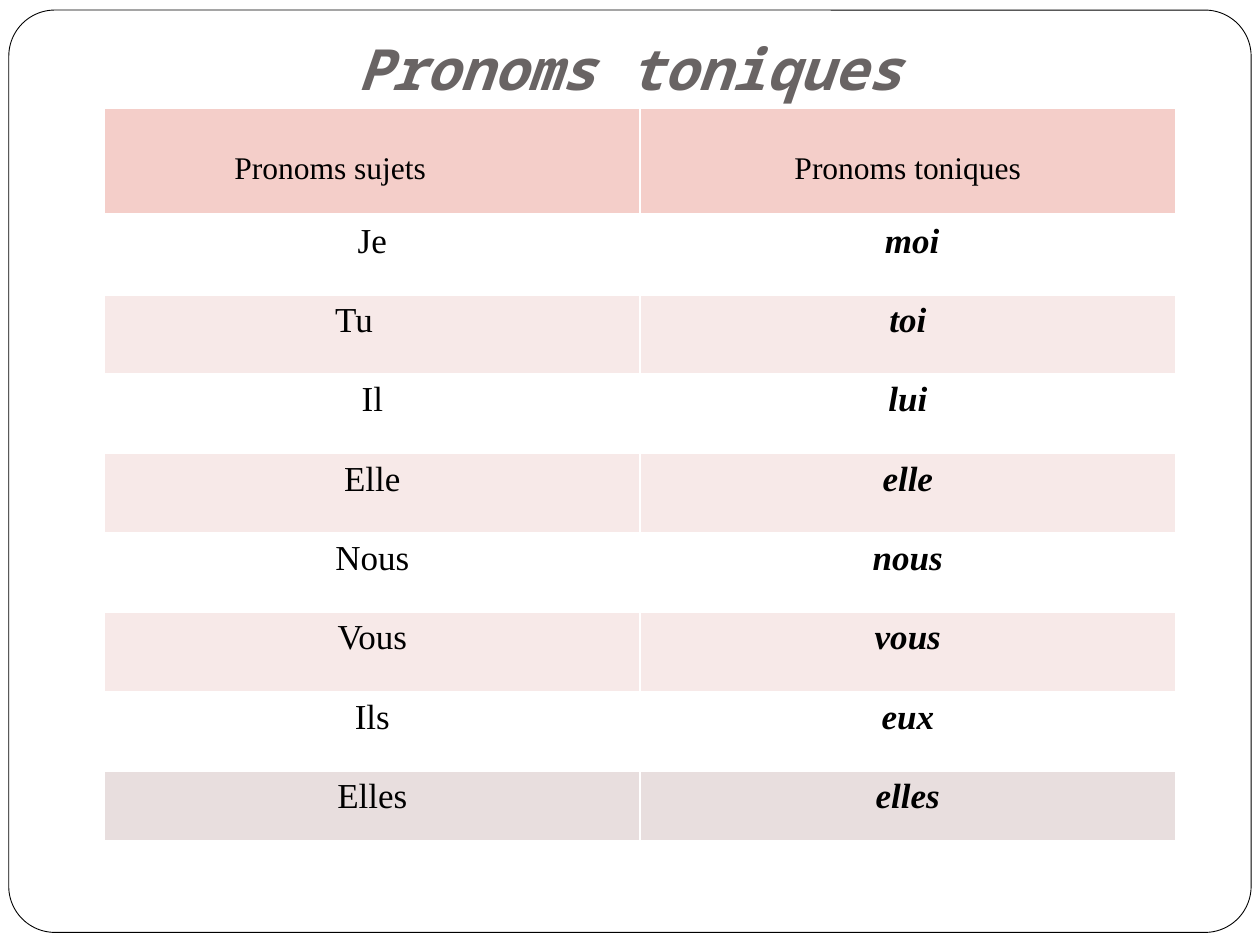
import pptx
import pptx.util
from lxml import etree
from pptx.dml.color import RGBColor
from pptx.enum.shapes import MSO_SHAPE
from pptx.enum.text import MSO_ANCHOR, MSO_AUTO_SIZE, PP_ALIGN
from pptx.oxml.ns import qn
from pptx.util import Inches

# Content
TITLE = "Pronoms toniques"
HEADINGS = ("Pronoms sujets", "Pronoms toniques")
PRONOUNS = [
    ("Je", "moi"),
    ("Tu", "toi"),
    ("Il", "lui"),
    ("Elle", "elle"),
    ("Nous", "nous"),
    ("Vous", "vous"),
    ("Ils", "eux"),
    ("Elles", "elles"),
]
ROWS = [HEADINGS] + PRONOUNS

# Layout: left indents move single entries away from the centre
INDENTS = {"Pronoms sujets": 0.93, "Tu": 1.73}
NUDGES = {"moi": 0.07}
HEADER_HEIGHT, ROW_HEIGHT, LAST_HEIGHT = 0.85, 0.63, 0.55
COLUMN_WIDTH = 4.25
HEADER_FILL, BAND_FILL, LAST_FILL, PLAIN_FILL = "F4CEC9", "F7E9E8", "E8DEDE", "FFFFFF"


def colour(hex_value):
    return RGBColor.from_string(hex_value)


def write(frame, text, font="Times New Roman", size=20, ink="000000",
          bold=False, italic=False, align=PP_ALIGN.CENTER):
    paragraph = frame.paragraphs[0]
    paragraph.alignment = align
    run = paragraph.add_run()
    run.text = text
    run.font.name = font
    run.font.size = pptx.util.Pt(size)
    run.font.bold = bold
    run.font.italic = italic
    run.font.color.rgb = colour(ink)


def add_borders(cell, bottom_width):
    properties = cell._tc.get_or_add_tcPr()
    for side, width in (("L", 1), ("R", 1), ("T", 1), ("B", bottom_width)):
        line = etree.SubElement(properties, qn(f"a:ln{side}"), w=str(pptx.util.Pt(width)))
        solid = etree.SubElement(line, qn("a:solidFill"))
        etree.SubElement(solid, qn("a:srgbClr"), val="FFFFFF")


def row_style(row):
    """Return the height and fill of a table row."""
    if row == 0:
        return HEADER_HEIGHT, HEADER_FILL
    if row == len(ROWS) - 1:
        return LAST_HEIGHT, LAST_FILL
    return ROW_HEIGHT, PLAIN_FILL if row % 2 else BAND_FILL


deck = pptx.Presentation()
deck.slide_width, deck.slide_height = Inches(10), Inches(7.5)
slide = deck.slides.add_slide(deck.slide_layouts[5])

# Title
title = slide.shapes.title
title.left, title.top = Inches(0.5), Inches(0.21)
title.width, title.height = Inches(9), Inches(1.18)
heading = title.text_frame
heading.auto_size = MSO_AUTO_SIZE.NONE
heading.vertical_anchor = MSO_ANCHOR.BOTTOM
heading.margin_top, heading.margin_bottom = 0, Inches(0.58)
write(heading, TITLE, font="Noto Sans Mono", size=32.4, ink="696464", bold=True, italic=True)

# Rounded border behind everything
border = slide.shapes.add_shape(MSO_SHAPE.ROUNDED_RECTANGLE, Inches(0.07), Inches(0.08),
                                Inches(9.86), Inches(7.32))
border.adjustments[0] = 0.05
border.shadow.inherit = False
border.fill.solid()
border.fill.fore_color.rgb = colour("FFFFFF")
border.line.color.rgb = colour("000000")
border.line.width = pptx.util.Pt(0.5)
title.element.addprevious(border.element)

# Pronoun table
table_height = sum(row_style(row)[0] for row in range(len(ROWS)))
table = slide.shapes.add_table(len(ROWS), 2, Inches(0.83), Inches(0.86),
                               Inches(2 * COLUMN_WIDTH), Inches(table_height)).table
table.first_row = table.horz_banding = False
for column in table.columns:
    column.width = Inches(COLUMN_WIDTH)

for row, entries in enumerate(ROWS):
    height, fill = row_style(row)
    header = row == 0
    table.rows[row].height = Inches(height)
    for column, text in enumerate(entries):
        cell = table.cell(row, column)
        indent = INDENTS.get(text, 0)
        stressed = column == 1 and not header
        cell.margin_left = Inches(0.1 + indent + NUDGES.get(text, 0))
        cell.margin_top = Inches(0.34 if header else 0.05)
        add_borders(cell, 3 if header else 1)
        cell.fill.solid()
        cell.fill.fore_color.rgb = colour(fill)
        write(cell.text_frame, text, size=18 if header else 20, bold=stressed, italic=stressed,
              align=PP_ALIGN.LEFT if indent else PP_ALIGN.CENTER)

deck.save("out.pptx")
